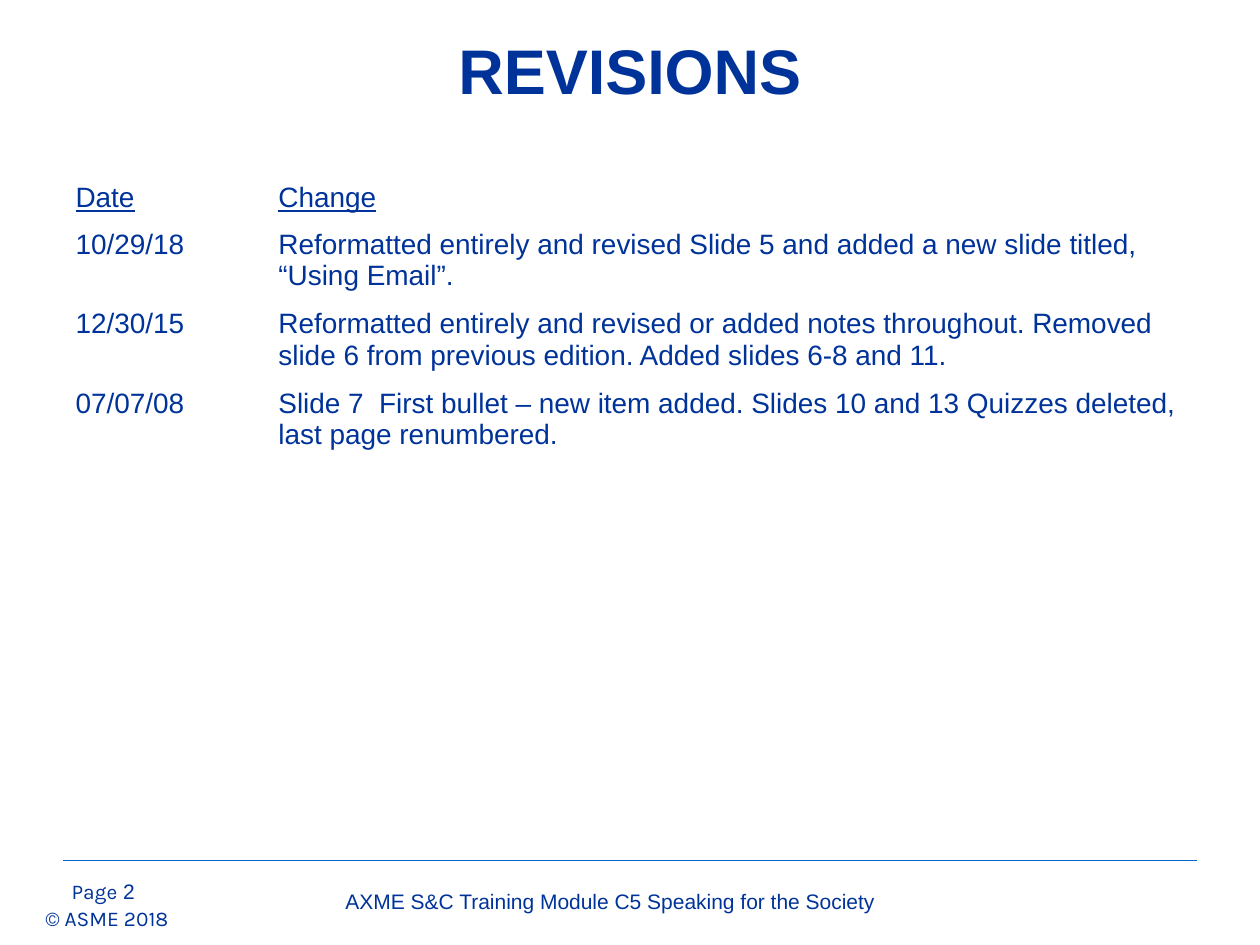
from lxml import etree
from pptx import Presentation
from pptx import util as u
from pptx.dml.color import RGBColor
from pptx.enum import shapes, text
from pptx.oxml.ns import qn

NAVY, BLUE, WHITE = "003399", "0066CC", "FFFFFF"
TITLE = "REVISIONS"
ROWS = [
    ("Date", "Change"),
    ("10/29/18", "Reformatted entirely and revised Slide 5 and added a new slide titled, “Using Email”."),
    ("12/30/15", "Reformatted entirely and revised or added notes throughout. "
                 "Removed slide 6 from previous edition. Added slides 6-8 and 11."),
    ("07/07/08", "Slide 7  First bullet – new item added. Slides 10 and 13 Quizzes deleted, "
                 "last page renumbered."),
]
WIDTHS = (1.61, 7.39)
HEIGHTS = (0.32, 0.32, 0.32, 0.55)
LABELS = [
    ("Page", (0.47, 6.92, 0.77, 0.26), {"face": "Karla"}),
    ("© ASME 2018", (0.36, 7.19, 1.04, 0.2), {"face": "Karla", "inset": 0, "wrap": False}),
    ("AXME S&C Training Module C5 Speaking for the Society", (1.51, 7, 6.67, 0.26), {"align": "CENTER"}),
    ("2", (0.88, 6.92, 0.47, 0.23), {}),
]


def color(code):
    return RGBColor.from_string(code)


def place(shape, box):
    shape.left, shape.top, shape.width, shape.height = map(u.Inches, box)


def write(frame, words, size=12, face="Arial", bold=False, under=False,
          align="LEFT", anchor="TOP", inset=None, wrap=True):
    frame.word_wrap = wrap
    frame.vertical_anchor = text.MSO_ANCHOR[anchor]
    if inset is not None:
        frame.margin_left = frame.margin_right = u.Inches(inset)
        frame.margin_top = frame.margin_bottom = u.Inches(inset)
    para = frame.paragraphs[0]
    para.alignment = text.PP_ALIGN[align]
    run = para.add_run()
    run.text = words
    font = run.font
    font.name, font.size = face, u.Pt(size)
    font.bold, font.underline = bold, under
    font.color.rgb = color(NAVY)


def rule(slide):
    line = slide.shapes.add_connector(
        shapes.MSO_CONNECTOR.STRAIGHT, *map(u.Inches, (0.5, 6.83, 9.5, 6.83)))
    line.line.color.rgb = color(BLUE)
    line.line.width = u.Pt(0.75)
    etree.SubElement(line._element.spPr, qn("a:effectLst"))


def log(slide):
    box = map(u.Inches, (0.5, 1.4, sum(WIDTHS), sum(HEIGHTS)))
    grid = slide.shapes.add_table(len(ROWS), len(WIDTHS), *box).table
    grid.first_row = grid.horz_banding = False
    for col, width in zip(grid.columns, WIDTHS):
        col.width = u.Inches(width)
    for r, (row, height) in enumerate(zip(ROWS, HEIGHTS)):
        grid.rows[r].height = u.Inches(height)
        for c, words in enumerate(row):
            cell = grid.cell(r, c)
            cell.fill.solid()
            cell.fill.fore_color.rgb = color(WHITE)
            write(cell.text_frame, words, size=16, under=r == 0)


def main():
    """Build the revisions slide."""
    deck = Presentation()
    deck.slide_width, deck.slide_height = u.Inches(10), u.Inches(7.5)
    slide = deck.slides.add_slide(deck.slide_layouts[5])
    rule(slide)
    title = slide.shapes.title
    place(title, (1, 0.3, 8, 0.5))
    write(title.text_frame, TITLE, size=36, bold=True, align="CENTER", anchor="MIDDLE")
    for words, box, style in LABELS:
        label = slide.shapes.add_textbox(*map(u.Inches, box))
        write(label.text_frame, words, **style)
    log(slide)
    deck.save("out.pptx")


if __name__ == "__main__":
    main()
